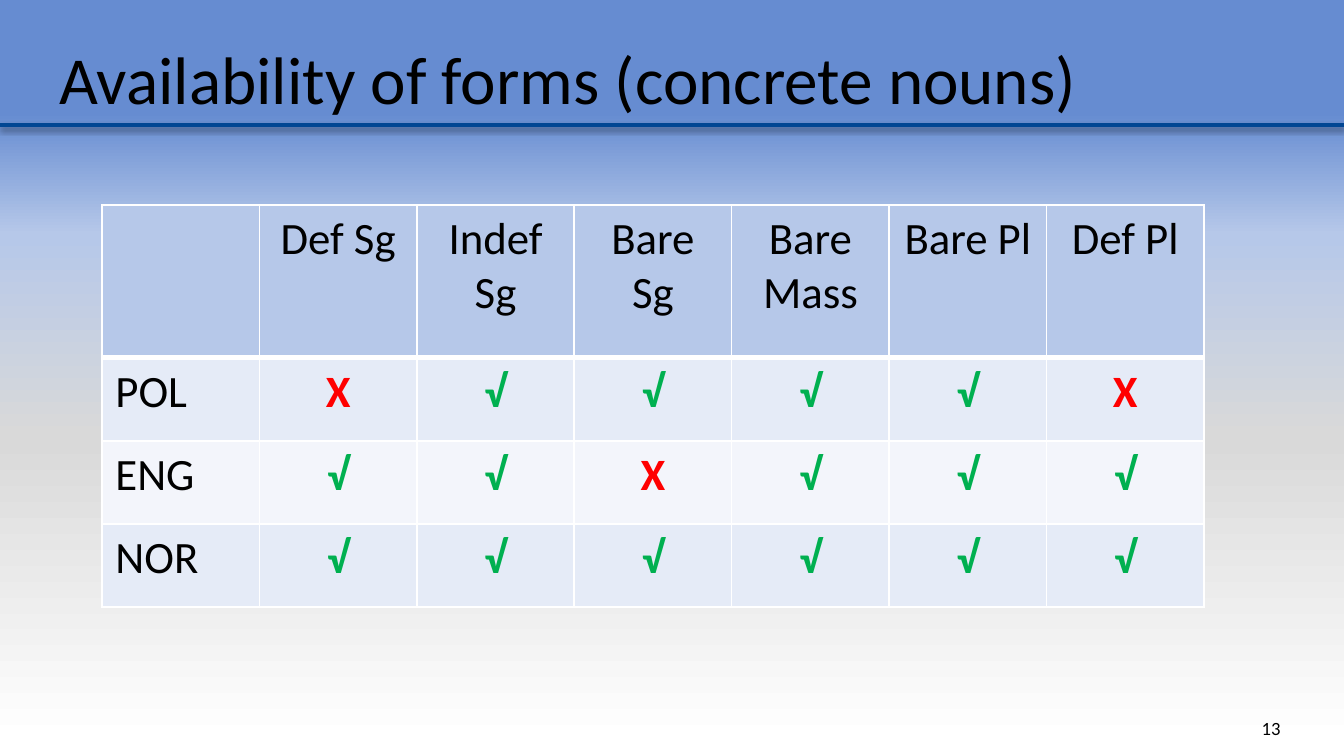
from lxml.etree import SubElement
from pptx import Presentation
from pptx.dml.color import RGBColor
from pptx.enum.shapes import MSO_CONNECTOR
from pptx.enum.text import MSO_ANCHOR, PP_ALIGN
from pptx.oxml.ns import qn
from pptx.util import Pt

SCALE = 914400 / 134.4
FONT = "Calibri"
COLORS = {
    "text": "000000",
    "yes": "00B050",
    "no": "FF0000",
    "header": "B6C8E9",
    "band": "E5EBF7",
    "plain": "F3F5FB",
    "border": "FFFFFF",
    "rule": "014693",
    "shadow": "000000",
}
BACKGROUND = [(2, "FFFFFF"), (42, "D9D9D9"), (69, "B6C8E9"), (85, "668CD1")]
HEADERS = ["", "Def Sg", "Indef Sg", "Bare Sg", "Bare Mass", "Bare Pl", "Def Pl"]
ROWS = [
    ["POL", "X", "√", "√", "√", "√", "X"],
    ["ENG", "√", "√", "X", "√", "√", "√"],
    ["NOR", "√", "√", "√", "√", "√", "√"],
]
MARKS = {"X": "no", "√": "yes"}


def px(value):
    return round(value * SCALE)


def rgb(name):
    return RGBColor.from_string(COLORS[name])


def write(frame, text, size=24, color="text", bold=False, align=PP_ALIGN.LEFT):
    para = frame.paragraphs[0]
    para.alignment = align
    para.font.size = Pt(size)
    if not text:
        return
    span = para.add_run()
    span.text = text
    span.font.name = FONT
    span.font.size = Pt(size)
    span.font.bold = bold
    span.font.color.rgb = rgb(color)


def add_text(page, box, text, anchor=MSO_ANCHOR.TOP, **style):
    frame = page.shapes.add_textbox(*map(px, box)).text_frame
    frame.word_wrap = True
    frame.vertical_anchor = anchor
    write(frame, text, **style)


def add_color(parent, value):
    return SubElement(parent, qn("a:srgbClr"), val=value)


def paint_background(page):
    fill = page.background.fill
    fill.gradient()
    fill.gradient_angle = 90
    stops = page.element.find(".//" + qn("a:gsLst"))
    stops.clear()
    for position, value in BACKGROUND:
        add_color(SubElement(stops, qn("a:gs"), pos=str(position * 1000)), value)


def add_borders(cell, **widths):
    properties = cell._tc.get_or_add_tcPr()
    for side in ("L", "R", "T", "B"):
        width = Pt(widths.get(side, 1))
        line = SubElement(properties, qn(f"a:ln{side}"), w=str(width))
        add_color(SubElement(line, qn("a:solidFill")), COLORS["border"])


def add_forms_table(page, box, header_height):
    left, top, width, height = box
    rows = [HEADERS, *ROWS]
    frame = page.shapes.add_table(len(rows), len(HEADERS), *map(px, box))
    table = frame.table
    body_height = (height - header_height) / len(ROWS)
    for index, labels in enumerate(rows):
        table.rows[index].height = px(body_height if index else header_height)
        fill = ("band" if index % 2 else "plain") if index else "header"
        thick = {0: {"B": 3}, 1: {"T": 3}}.get(index, {})
        for column, label in enumerate(labels):
            cell = table.cell(index, column)
            add_borders(cell, **thick)
            cell.fill.solid()
            cell.fill.fore_color.rgb = rgb(fill)
            write(
                cell.text_frame,
                label,
                color=MARKS.get(label, "text"),
                bold=label in MARKS,
                align=PP_ALIGN.CENTER if column else PP_ALIGN.LEFT,
            )


def add_title_rule(page, box):
    left, top, width, height = box
    rule = page.shapes.add_connector(
        MSO_CONNECTOR.STRAIGHT, px(left), px(top), px(left + width), px(top + height)
    )
    rule.line.color.rgb = rgb("rule")
    rule.line.width = Pt(2)
    effects = SubElement(rule._element.spPr, qn("a:effectLst"))
    shadow = SubElement(
        effects,
        qn("a:outerShdw"),
        blurRad=str(Pt(3.1)),
        dist=str(Pt(1.6)),
        dir="5400000",
        rotWithShape="0",
    )
    SubElement(add_color(shadow, COLORS["shadow"]), qn("a:alpha"), val="38000")


def build_slide(deck, box):
    left, top, width, height = box
    page = deck.slides.add_slide(deck.slide_layouts[6])
    paint_background(page)
    add_text(
        page,
        (left + 1246, top + 708, 50, 40),
        "13",
        anchor=MSO_ANCHOR.MIDDLE,
        size=10,
        align=PP_ALIGN.CENTER,
    )
    add_text(
        page,
        (left + 46, top + 31, 1210, 95),
        "Availability of forms (concrete nouns)",
        size=36,
    )
    add_forms_table(page, (left + 102, top + 205, 1102, 402), 153)
    add_title_rule(page, (left, top + 125, width, 0))


def main():
    deck = Presentation()
    deck.slide_width = px(1344)
    deck.slide_height = px(756)
    build_slide(deck, (0, 0, 1344, 756))
    deck.save("out.pptx")


if __name__ == "__main__":
    main()
